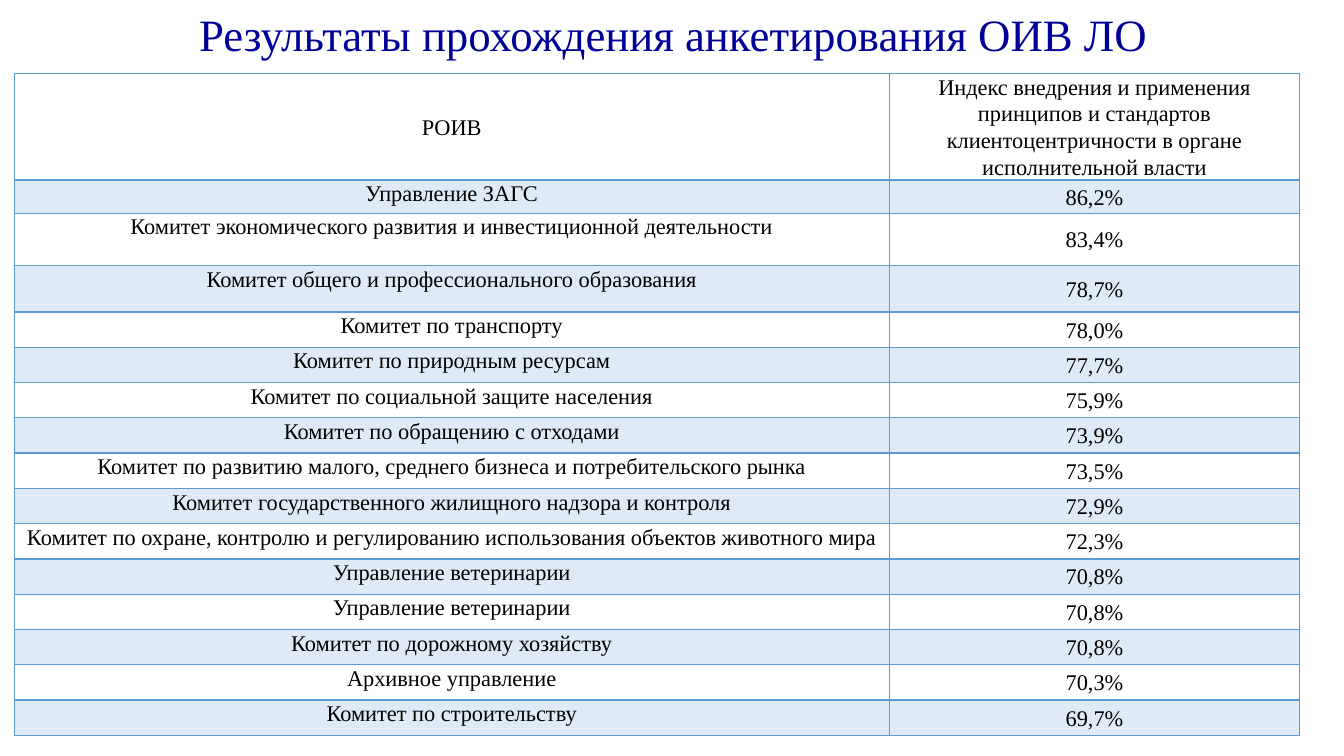
from lxml import etree
from pptx import Presentation
from pptx.dml.color import RGBColor
from pptx.enum.text import MSO_ANCHOR, PP_ALIGN
from pptx.oxml.ns import qn
from pptx.util import Inches, Pt

NAVY = RGBColor(0x00, 0x00, 0x99)
BLACK = RGBColor(0x00, 0x00, 0x00)
BLUE = RGBColor(0x5B, 0x9B, 0xD5)
PALE_BLUE = RGBColor(0xDE, 0xEB, 0xF7)

HEADER = ("РОИВ", "Индекс внедрения и применения принципов и стандартов "
          "клиентоцентричности в органе исполнительной власти")
RESULTS = [
    ("Управление ЗАГС", "86,2%"),
    ("Комитет экономического развития и инвестиционной деятельности", "83,4%"),
    ("Комитет общего и профессионального образования", "78,7%"),
    ("Комитет по транспорту", "78,0%"),
    ("Комитет по природным ресурсам", "77,7%"),
    ("Комитет по социальной защите населения", "75,9%"),
    ("Комитет по обращению с отходами", "73,9%"),
    ("Комитет по развитию малого, среднего бизнеса и потребительского рынка", "73,5%"),
    ("Комитет государственного жилищного надзора и контроля", "72,9%"),
    ("Комитет по охране, контролю и регулированию использования объектов животного мира", "72,3%"),
    ("Управление ветеринарии", "70,8%"),
    ("Управление ветеринарии", "70,8%"),
    ("Комитет по дорожному хозяйству", "70,8%"),
    ("Архивное управление", "70,3%"),
    ("Комитет по строительству", "69,7%"),
]
ROWS = [HEADER] + RESULTS
HEIGHTS = [0.88, 0.33, 0.52, 0.46] + [0.35] * (len(ROWS) - 4)


def write(tf, text, size, color, spacing):
    tf.word_wrap = True
    p = tf.paragraphs[0]
    p.alignment = PP_ALIGN.CENTER
    p.line_spacing = spacing
    r = p.add_run()
    r.text = text
    for name, value in {"name": "Times New Roman", "size": Pt(size)}.items():
        setattr(r.font, name, value)
    r.font.color.rgb = color


def add_borders(cell, bottom_width):
    tcPr = cell._tc.get_or_add_tcPr()
    widths = {"a:lnL": 1, "a:lnR": 1, "a:lnT": 1, "a:lnB": bottom_width}
    for i, (tag, width) in enumerate(widths.items()):
        ln = etree.Element(qn(tag), w=str(Pt(width)))
        fill = etree.SubElement(ln, qn("a:solidFill"))
        etree.SubElement(fill, qn("a:srgbClr"), val=str(BLUE))
        tcPr.insert(i, ln)


prs = Presentation()
prs.slide_width, prs.slide_height = Inches(13.33), Inches(7.5)
s = prs.slides.add_slide(prs.slide_layouts[5])

title = s.shapes.title
title.left, title.top = Inches(0.93), Inches(0)
title.width, title.height = Inches(11.5), Inches(0.73)
title.text_frame.vertical_anchor = MSO_ANCHOR.MIDDLE
write(title.text_frame, "Результаты прохождения анкетирования ОИВ ЛО", 32, NAVY, 0.9)

frame = s.shapes.add_table(len(ROWS), 2, Inches(0.14), Inches(0.73), Inches(12.75), Inches(6.65))
table = frame.table
table.horz_banding = False
for column, width in zip(table.columns, (8.68, 4.07)):
    column.width = Inches(width)
for i, (row, height, texts) in enumerate(zip(table.rows, HEIGHTS, ROWS)):
    row.height = Inches(height)
    side = Inches(0.05 if i < 6 else 0.07)
    for j, (cell, text) in enumerate(zip(row.cells, texts)):
        fmt = {
            "margin_left": side, "margin_right": side, "margin_top": 0, "margin_bottom": 0,
            "vertical_anchor": MSO_ANCHOR.TOP if i and j == 0 else MSO_ANCHOR.MIDDLE,
        }
        for name, value in fmt.items():
            setattr(cell, name, value)
        if i % 2:
            cell.fill.solid()
            cell.fill.fore_color.rgb = PALE_BLUE
        else:
            cell.fill.background()
        add_borders(cell, 1 if i else 2)
        write(cell.text_frame, text, 16, BLACK, 1.07)
        cell.text_frame.paragraphs[0].runs[0].font.bold = False
frame.height = Inches(6.65)

prs.save("out.pptx")
